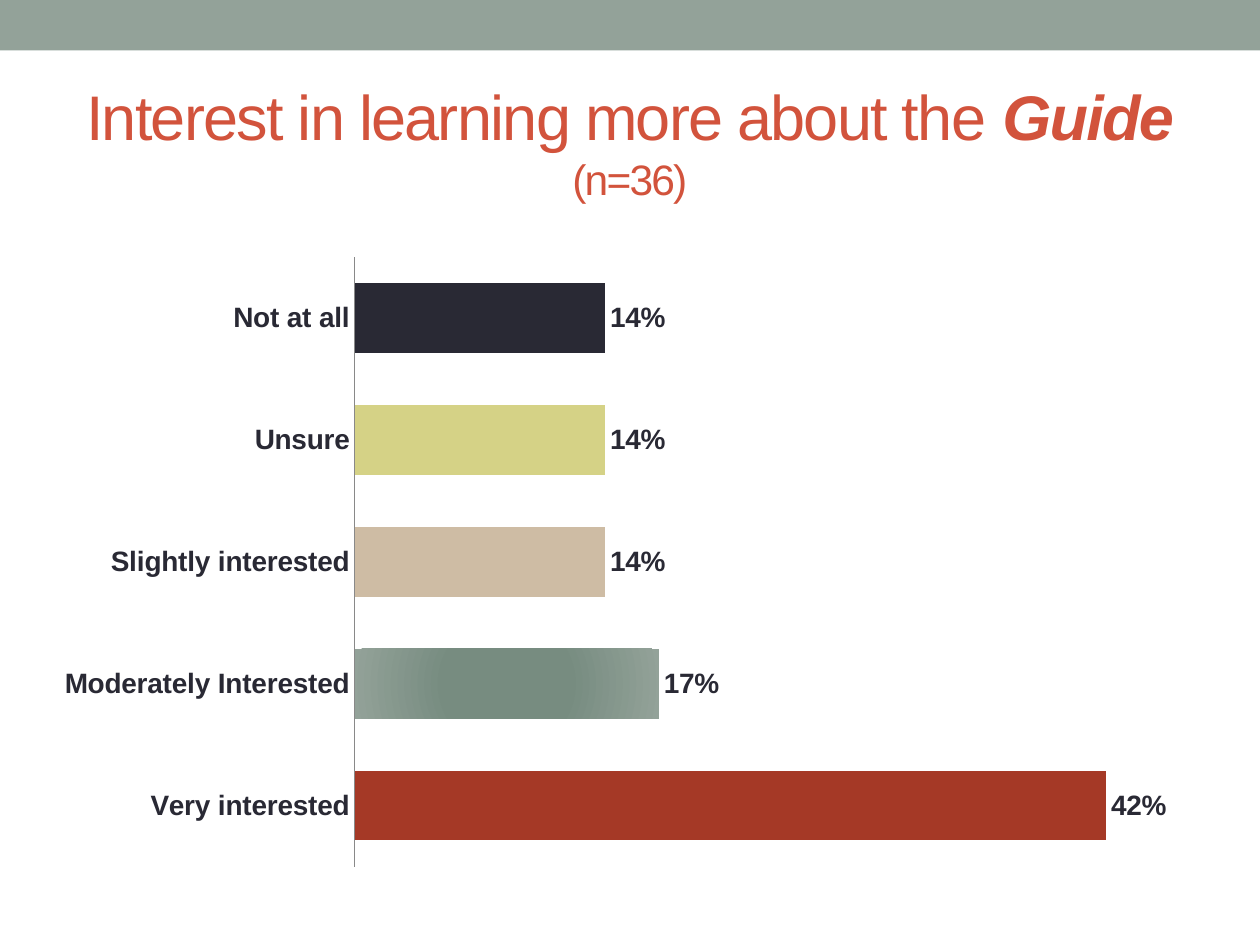
from dataclasses import dataclass

from lxml import etree
from pptx import Presentation
from pptx.chart.data import CategoryChartData
from pptx.dml.color import RGBColor
from pptx.enum import chart as charts, shapes, text
from pptx.oxml import parse_xml
from pptx.oxml.ns import nsdecls, qn
from pptx.util import Inches, Pt


@dataclass(frozen=True)
class Theme:
    font: str = "Arial"
    sage: str = "93A299"
    deep_sage: str = "778C80"
    title: str = "D2533C"
    ink: str = "292934"
    axis: str = "898989"
    brick: str = "A53926"
    sand: str = "CEBCA4"
    olive: str = "D5D286"
    title_size: float = 36
    count_size: float = 24.3
    label_size: float = 16


class SlideBuilder:
    def __init__(self, slide, theme):
        self.slide = slide
        self.theme = theme

    def style_font(self, font, size, color, bold=False, italic=False):
        font.name = self.theme.font
        font.size = Pt(size)
        font.bold = bold
        font.italic = italic
        font.color.rgb = RGBColor.from_string(color)

    def band(self, x, y, w, h, color):
        sp = self.slide.shapes.add_shape(
            shapes.MSO_SHAPE.RECTANGLE, Inches(x), Inches(y), Inches(w), Inches(h))
        sp.shadow.inherit = False
        sp.fill.solid()
        sp.fill.fore_color.rgb = RGBColor.from_string(color)
        sp.line.fill.background()

    def title(self, x, y, w, h, lead, emphasis, count):
        t = self.theme
        sp = self.slide.shapes.add_textbox(Inches(x), Inches(y), Inches(w), Inches(h))
        tf = sp.text_frame
        tf.word_wrap = True
        tf.vertical_anchor = text.MSO_ANCHOR.MIDDLE
        p = tf.paragraphs[0]
        p.alignment = text.PP_ALIGN.CENTER
        for words, size, strong in ((lead, t.title_size, False),
                                    (emphasis, t.title_size, True),
                                    (count, t.count_size, False)):
            if words == count:
                p.add_line_break()
            r = p.add_run()
            r.text = words
            self.style_font(r.font, size, t.title, strong, strong)
            r.font._element.set("spc", "-100")

    def bar_chart(self, x, y, w, h, bars, plot):
        """Draw (category, value, colour) bars; a colour of None means radial sage."""
        t = self.theme
        data = CategoryChartData(number_format="0%")
        data.categories = [name for name, _, _ in bars]
        data.add_series("Series 1", [value for _, value, _ in bars])
        chart = self.slide.shapes.add_chart(
            charts.XL_CHART_TYPE.BAR_CLUSTERED,
            Inches(x), Inches(y), Inches(w), Inches(h), data).chart
        chart.has_legend = False
        chart.has_title = False
        self.style_font(chart.font, 10, t.ink)

        cat = chart.category_axis
        cat.major_tick_mark = charts.XL_TICK_MARK.NONE
        cat.format.line.color.rgb = RGBColor.from_string(t.axis)
        cat.format.line.width = Pt(0.75)
        self.style_font(cat.tick_labels.font, t.label_size, t.ink, bold=True)
        val = chart.value_axis
        val.minimum_scale, val.maximum_scale = 0, 0.45
        val.has_major_gridlines = False
        val.visible = False

        bar_plot = chart.plots[0]
        bar_plot.gap_width = 75
        bar_plot.vary_by_categories = False
        bar_plot.has_data_labels = True
        labels = bar_plot.data_labels
        labels.show_value = True
        labels.number_format, labels.number_format_is_linked = "0%", False
        labels.position = charts.XL_LABEL_POSITION.OUTSIDE_END
        self.style_font(labels.font, t.label_size, t.ink, bold=True)

        series = bar_plot.series[0]
        series.format.fill.solid()
        series.format.fill.fore_color.rgb = RGBColor.from_string(t.sage)
        for i, (_, _, color) in enumerate(bars):
            fill = series.points[i].format.fill
            fill.solid()
            fill.fore_color.rgb = RGBColor.from_string(color or t.sage)
            if color is None:
                self.radial_fill(series, i)
        self.place_plot(chart, *plot)

    def radial_fill(self, series, index):
        t = self.theme
        point = series._element.findall(qn("c:dPt"))[index]
        solid = point.find(qn("c:spPr")).find(qn("a:solidFill"))
        solid.getparent().replace(solid, parse_xml(
            f'<a:gradFill {nsdecls("a")} rotWithShape="1"><a:gsLst>'
            f'<a:gs pos="0"><a:srgbClr val="{t.deep_sage}"/></a:gs>'
            f'<a:gs pos="40000"><a:srgbClr val="{t.deep_sage}"/></a:gs>'
            f'<a:gs pos="100000"><a:srgbClr val="{t.sage}"/></a:gs></a:gsLst>'
            '<a:path path="circle"><a:fillToRect l="50000" t="50000" r="50000" b="50000"/>'
            '</a:path></a:gradFill>'))

    def place_plot(self, chart, x, y, w, h):
        """Fix the inner plot area, in fractions of the chart."""
        area = chart._chartSpace.chart.plotArea
        for old in area.findall(qn("c:layout")):
            area.remove(old)
        layout = etree.Element(qn("c:layout"))
        manual = etree.SubElement(layout, qn("c:manualLayout"))
        for tag, value in (("layoutTarget", "inner"), ("xMode", "edge"), ("yMode", "edge"),
                           ("x", x), ("y", y), ("w", w), ("h", h)):
            etree.SubElement(manual, qn(f"c:{tag}")).set("val", str(value))
        area.insert(0, layout)


def main():
    prs = Presentation()
    prs.slide_width, prs.slide_height = Inches(10), Inches(7.5)
    theme = Theme()
    s = SlideBuilder(prs.slides.add_slide(prs.slide_layouts[6]), theme)
    s.band(0, 0, 10, 0.4, theme.sage)
    s.title(0.5, 0.58, 9, 1.08, "Interest in learning more about the ", "Guide", "(n=36)")
    bars = [
        ("Very interested", 0.42, theme.brick),
        ("Moderately Interested", 0.17, None),
        ("Slightly interested", 0.14, theme.sand),
        ("Unsure", 0.14, theme.olive),
        ("Not at all", 0.14, theme.ink),
    ]
    s.bar_chart(0.35, 1.94, 9.13, 5.04, bars, plot=(0.27, 0.02, 0.7, 0.96))
    prs.save("out.pptx")


if __name__ == "__main__":
    main()
